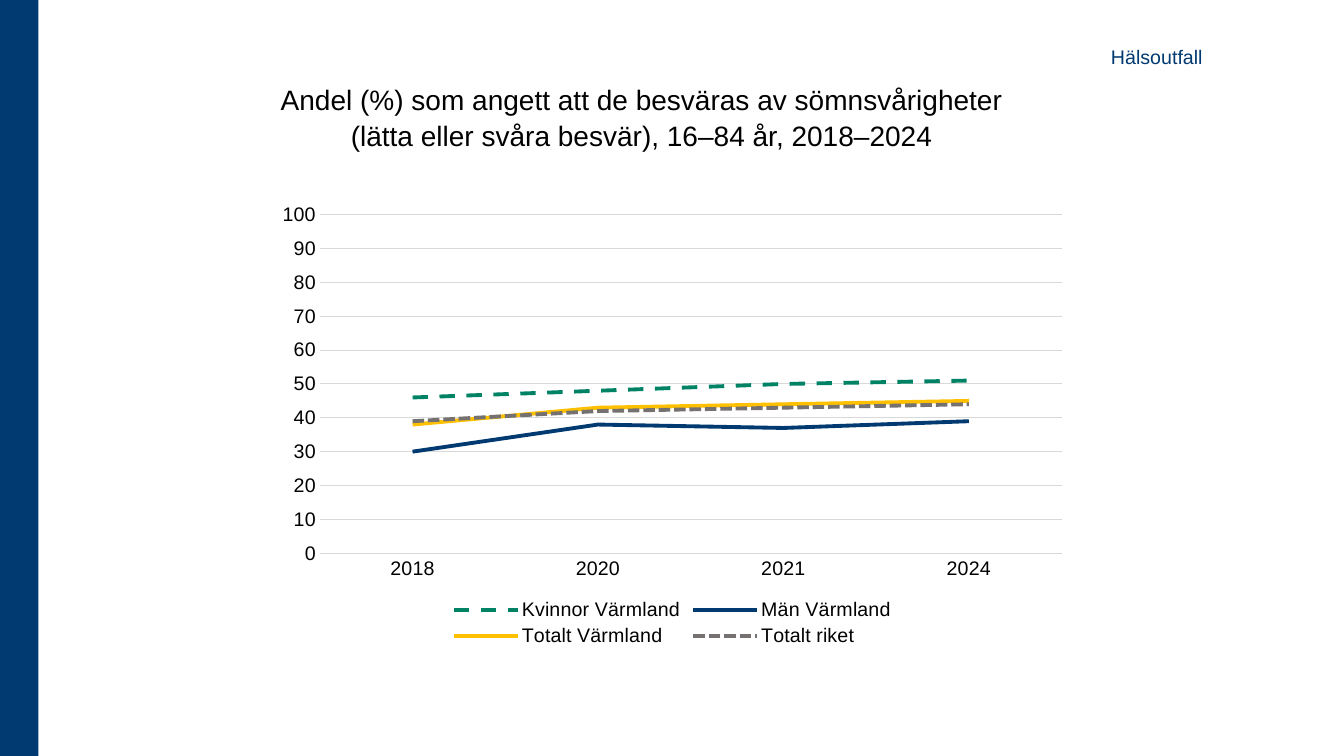
from dataclasses import dataclass

from lxml.etree import SubElement
from pptx import Presentation
from pptx.chart.data import CategoryChartData
from pptx.dml.color import RGBColor
from pptx.enum.chart import XL_CHART_TYPE, XL_LEGEND_POSITION, XL_TICK_MARK
from pptx.enum.dml import MSO_LINE
from pptx.enum.shapes import MSO_SHAPE
from pptx.enum.text import MSO_ANCHOR, MSO_AUTO_SIZE, PP_ALIGN
from pptx.oxml.ns import qn
from pptx.util import Inches, Pt

TITLE = ("Andel (%) som angett att de besväras av sömnsvårigheter "
         "(lätta eller svåra besvär), 16–84 år, 2018–2024")
SECTION = "Hälsoutfall"
YEARS = ["2018", "2020", "2021", "2024"]
SERIES = [  # name, values, colour, dash
    ("Kvinnor Värmland", (46, 48, 50, 51), "008264", MSO_LINE.DASH),
    ("Män Värmland", (30, 38, 37, 39), "003A70", None),
    ("Totalt Värmland", (38, 43, 44, 45), "FFC000", None),
    ("Totalt riket", (39, 42, 43, 44), "767171", MSO_LINE.SQUARE_DOT),
]

# left, top, width, height in inches
SLIDE_W, SLIDE_H = 13.33, 7.5
BAND = (0, 0, 0.38, SLIDE_H)
TITLE_BOX = (2.51, 0.23, 7.71, 1.33)
SECTION_BOX = (10.92, 0.4, 2.21, 0.34)
CHART_BOX = (2.65, 1.93, 8.04, 4.53)
PLOT_SHARE = {"x": 0.065, "y": 0.044, "w": 0.915, "h": 0.742}


@dataclass(frozen=True)
class Theme:
    font: str = "Arial"
    navy: str = "003A70"
    text: str = "000000"
    grid: str = "D9D9D9"
    title_size: int = 20
    label_size: int = 14
    series_width: float = 2.75
    grid_width: float = 0.75


THEME = Theme()


def rgb(value):
    return RGBColor.from_string(value)


def inches(box):
    return [Inches(v) for v in box]


def style_font(font, size, color):
    font.name, font.size = THEME.font, Pt(size)
    font.color.rgb = rgb(color)


def style_line(line, color, width):
    line.color.rgb = rgb(color)
    line.width = Pt(width)


def add_title(s):
    title = s.shapes.title
    title.left, title.top, title.width, title.height = inches(TITLE_BOX)
    tf = title.text_frame
    tf.text = TITLE
    tf.word_wrap = True
    tf.auto_size = MSO_AUTO_SIZE.NONE
    tf.vertical_anchor = MSO_ANCHOR.BOTTOM
    p = tf.paragraphs[0]
    p.alignment = PP_ALIGN.CENTER
    p.line_spacing = 1.07
    p.space_after = Pt(8)
    style_font(p.font, THEME.title_size, THEME.text)


def add_section_label(s):
    tf = s.shapes.add_textbox(*inches(SECTION_BOX)).text_frame
    tf.text = SECTION
    tf.word_wrap = True
    tf.auto_size = MSO_AUTO_SIZE.SHAPE_TO_FIT_TEXT
    style_font(tf.paragraphs[0].font, THEME.label_size, THEME.navy)


def add_band(s):
    sp = s.shapes.add_shape(MSO_SHAPE.RECTANGLE, *inches(BAND))
    sp.shadow.inherit = False
    sp.fill.solid()
    sp.fill.fore_color.rgb = rgb(THEME.navy)
    sp.line.fill.background()


def place_plot(chart):
    """Fix the inner plot area as shares of the chart's size."""
    plot_area = chart._chartSpace.chart.plotArea
    layout = plot_area.find(qn("c:layout"))
    if layout is None:
        layout = SubElement(plot_area, qn("c:layout"))
        plot_area.insert(0, layout)
    manual = SubElement(layout, qn("c:manualLayout"))
    settings = {"layoutTarget": "inner", "xMode": "edge", "yMode": "edge", **PLOT_SHARE}
    for tag, value in settings.items():
        SubElement(manual, qn(f"c:{tag}")).set("val", str(value))


def add_line_chart(s):
    data = CategoryChartData()
    data.categories = YEARS
    for name, values, _, _ in SERIES:
        data.add_series(name, values)
    chart = s.shapes.add_chart(XL_CHART_TYPE.LINE, *inches(CHART_BOX), data).chart
    chart.has_title = False
    style_font(chart.font, THEME.label_size, THEME.text)

    for series, (_, _, color, dash) in zip(chart.plots[0].series, SERIES):
        series.smooth = False
        style_line(series.format.line, color, THEME.series_width)
        if dash:
            series.format.line.dash_style = dash

    years, percent = chart.category_axis, chart.value_axis
    for axis in (years, percent):
        axis.major_tick_mark = axis.minor_tick_mark = XL_TICK_MARK.NONE
        style_font(axis.tick_labels.font, THEME.label_size, THEME.text)
    style_line(years.format.line, THEME.grid, THEME.grid_width)
    percent.minimum_scale, percent.maximum_scale, percent.major_unit = 0, 100, 10
    percent.format.line.fill.background()
    style_line(percent.major_gridlines.format.line, THEME.grid, THEME.grid_width)

    chart.has_legend = True
    chart.legend.position = XL_LEGEND_POSITION.BOTTOM
    chart.legend.include_in_layout = False
    style_font(chart.legend.font, THEME.label_size, THEME.text)
    place_plot(chart)


def main():
    prs = Presentation()
    prs.slide_width, prs.slide_height = Inches(SLIDE_W), Inches(SLIDE_H)
    s = prs.slides.add_slide(prs.slide_layouts.get_by_name("Title Only"))
    add_band(s)
    add_title(s)
    add_section_label(s)
    add_line_chart(s)
    prs.save("out.pptx")


if __name__ == "__main__":
    main()
